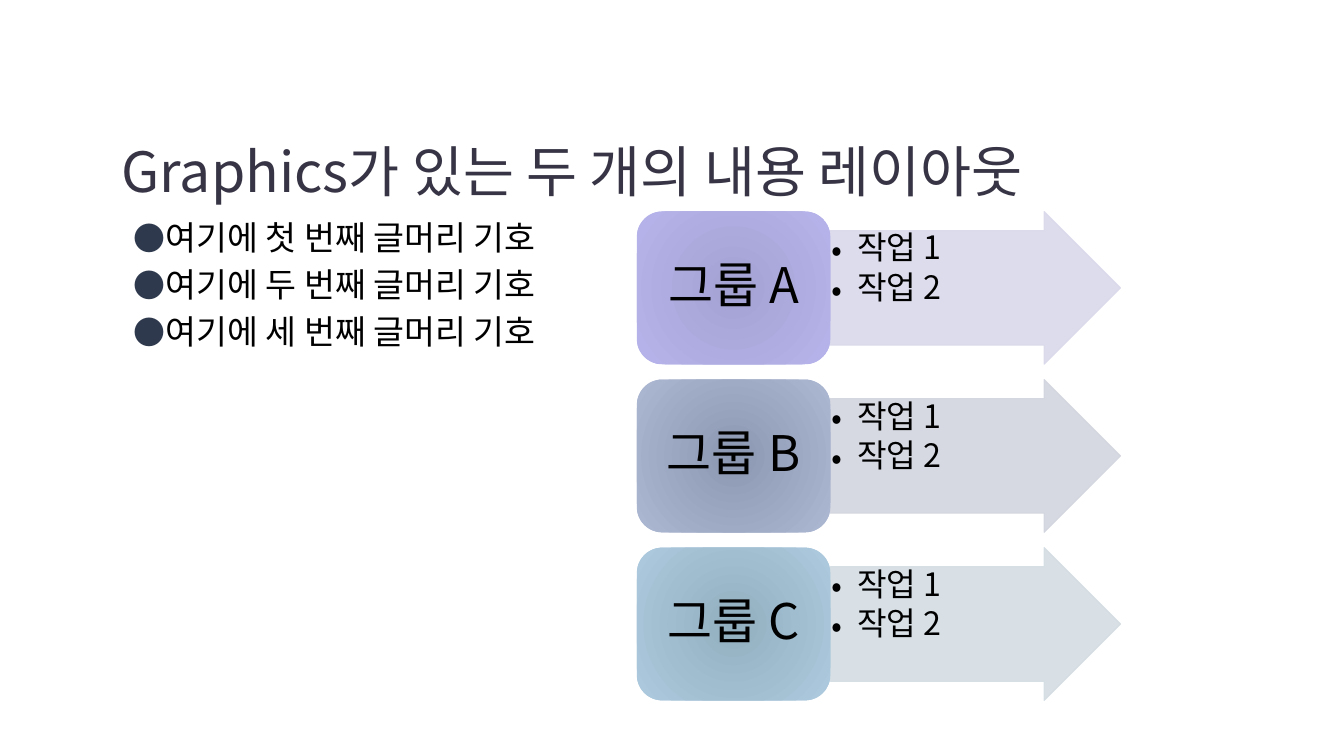
from collections import namedtuple

from pptx import Presentation
from pptx.dml.color import RGBColor
from pptx.enum.shapes import MSO_SHAPE as Shape
from pptx.enum.text import MSO_ANCHOR as Anchor, PP_ALIGN as Align
from pptx.oxml.ns import qn
from pptx.oxml.xmlchemy import OxmlElement
from pptx.util import Cm, Pt

FONT = "Noto Sans CJK KR"
BLACK = RGBColor(0x00, 0x00, 0x00)
TITLE_COLOR = RGBColor(0x37, 0x35, 0x45)
BULLET_COLOR = RGBColor(0x2E, 0x39, 0x4D)

Box = namedtuple("Box", "left top width height")
Group = namedtuple("Group", "name arrow center edge")

GROUPS = [
    Group("그룹 A", RGBColor(0xD9, 0xD9, 0xEB),
          RGBColor(0xA4, 0xA2, 0xD2), RGBColor(0xB6, 0xB4, 0xEB)),
    Group("그룹 B", RGBColor(0xD2, 0xD5, 0xDE),
          RGBColor(0x8C, 0x98, 0xB1), RGBColor(0xAC, 0xB7, 0xD2)),
    Group("그룹 C", RGBColor(0xD4, 0xDD, 0xE3),
          RGBColor(0x92, 0xAF, 0xC0), RGBColor(0xAD, 0xCA, 0xDE)),
]
TASKS = ["작업 1", "작업 2"]


def to_cm(box):
    return [Cm(length) for length in box]


def add_child(parent, tag, **attributes):
    child = OxmlElement(tag)
    for name, value in attributes.items():
        child.set(name, str(value))
    parent.append(child)
    return child


def add_bullet(properties, char, indent, color, size):
    properties.set("marL", str(Cm(indent)))
    properties.set("indent", str(-Cm(indent)))
    add_child(add_child(properties, "a:buClr"), "a:srgbClr", val=color)
    add_child(properties, "a:buSzPct", val=size * 1000)
    add_child(properties, "a:buFont", typeface=FONT)
    add_child(properties, "a:buChar", char=char)


def add_text(page, box, lines, size, color=BLACK, anchor=Anchor.TOP,
             align=Align.LEFT, insets=(0.25, 0.13, 0.25, 0.13), spacing=None,
             before=0, after=0, bullet=None, indent=0, bullet_color=BLACK,
             bullet_size=100):
    """Add one paragraph per line; before and after are percentages."""
    frame = page.shapes.add_textbox(*to_cm(box)).text_frame
    frame.word_wrap = True
    frame.vertical_anchor = anchor
    (frame.margin_left, frame.margin_top,
     frame.margin_right, frame.margin_bottom) = to_cm(insets)
    for index, line in enumerate(lines):
        para = frame.add_paragraph() if index else frame.paragraphs[0]
        para.alignment = align
        if spacing:
            para.line_spacing = spacing
        properties = para._p.get_or_add_pPr()
        for tag, percent in (("a:spcBef", before if index else 0),
                             ("a:spcAft", after)):
            add_child(add_child(properties, tag), "a:spcPct",
                      val=percent * 1000)
        if bullet:
            add_bullet(properties, bullet, indent, bullet_color, bullet_size)
        span = para.add_run()
        span.text = line
        span.font.name = FONT
        span.font.size = Pt(size)
        span.font.color.rgb = color
        add_child(span._r.get_or_add_rPr(), "a:ea", typeface=FONT)


def add_arrow(page, box, color):
    arrow = page.shapes.add_shape(Shape.RIGHT_ARROW, *to_cm(box))
    arrow.shadow.inherit = False
    arrow.adjustments[0] = 0.75
    arrow.adjustments[1] = 0.5
    arrow.fill.solid()
    arrow.fill.fore_color.rgb = color
    arrow.line.color.rgb = color
    arrow.line.width = Pt(0.75)
    for color_element in arrow._element.spPr.iter(qn("a:srgbClr")):
        add_child(color_element, "a:alpha", val=90000)


def add_tile(page, box, center, edge):
    """Add a rounded tile with a circular gradient."""
    tile = page.shapes.add_shape(Shape.ROUNDED_RECTANGLE, *to_cm(box))
    tile.shadow.inherit = False
    tile.line.fill.background()
    tile.fill.gradient()
    for stop, color, position in zip(tile.fill.gradient_stops,
                                     (center, edge), (0, 1)):
        stop.color.rgb = color
        stop.position = position
    gradient = tile._element.spPr.find(qn("a:gradFill"))
    gradient.remove(gradient.find(qn("a:lin")))
    circle = add_child(gradient, "a:path", path="circle")
    add_child(circle, "a:fillToRect", l=100000, t=100000, r=100000, b=100000)


def add_group_row(page, box, group):
    tile = Box(box.left, box.top, box.width * 0.4, box.height)
    arrow = Box(box.left + tile.width, box.top, box.width * 0.6, box.height)
    add_arrow(page, arrow, group.arrow)
    add_text(page, Box(arrow.left, arrow.top + arrow.height / 8,
                       arrow.width * 0.8, arrow.height * 0.75),
             TASKS, 23, insets=(0.04,) * 4, spacing=0.9, after=15,
             bullet="•", indent=0.64)
    add_tile(page, tile, group.center, group.edge)
    margin = 0.19
    add_text(page, Box(tile.left + margin, tile.top + margin,
                       tile.width - 2 * margin, tile.height - 2 * margin),
             [group.name], 35, anchor=Anchor.MIDDLE, align=Align.CENTER,
             insets=(0.38, 0.19, 0.38, 0.19), spacing=0.9, after=35)


def add_group_diagram(page, box):
    """Stack the rows with gaps of a tenth of a row."""
    count = len(GROUPS)
    height = box.height / (count + 0.1 * (count - 1))
    for index, group in enumerate(GROUPS):
        row = Box(box.left, box.top + index * height * 1.1, box.width, height)
        add_group_row(page, row, group)


def add_title(page, box):
    add_text(page, box, ["Graphics가 있는 두 개의 내용 레이아웃"], 39.6,
             color=TITLE_COLOR, anchor=Anchor.BOTTOM,
             insets=(0, 0.13, 0, 0))


def add_bullet_list(page, box):
    lines = [f"여기에 {order} 번째 글머리 기호" for order in ("첫", "두", "세")]
    add_text(page, box, lines, 24, before=20, bullet="●", indent=0.76,
             bullet_color=BULLET_COLOR, bullet_size=95)


def main():
    deck = Presentation()
    deck.slide_width, deck.slide_height = Cm(33.87), Cm(19.05)
    page = deck.slides.add_slide(deck.slide_layouts[6])
    add_title(page, Box(3.07, 1.96, 25.2, 3.18))
    add_bullet_list(page, Box(3.12, 5.33, 12.19, 12.32))
    add_group_diagram(page, Box(16.05, 5.33, 12.19, 12.32))
    deck.save("out.pptx")


if __name__ == "__main__":
    main()
